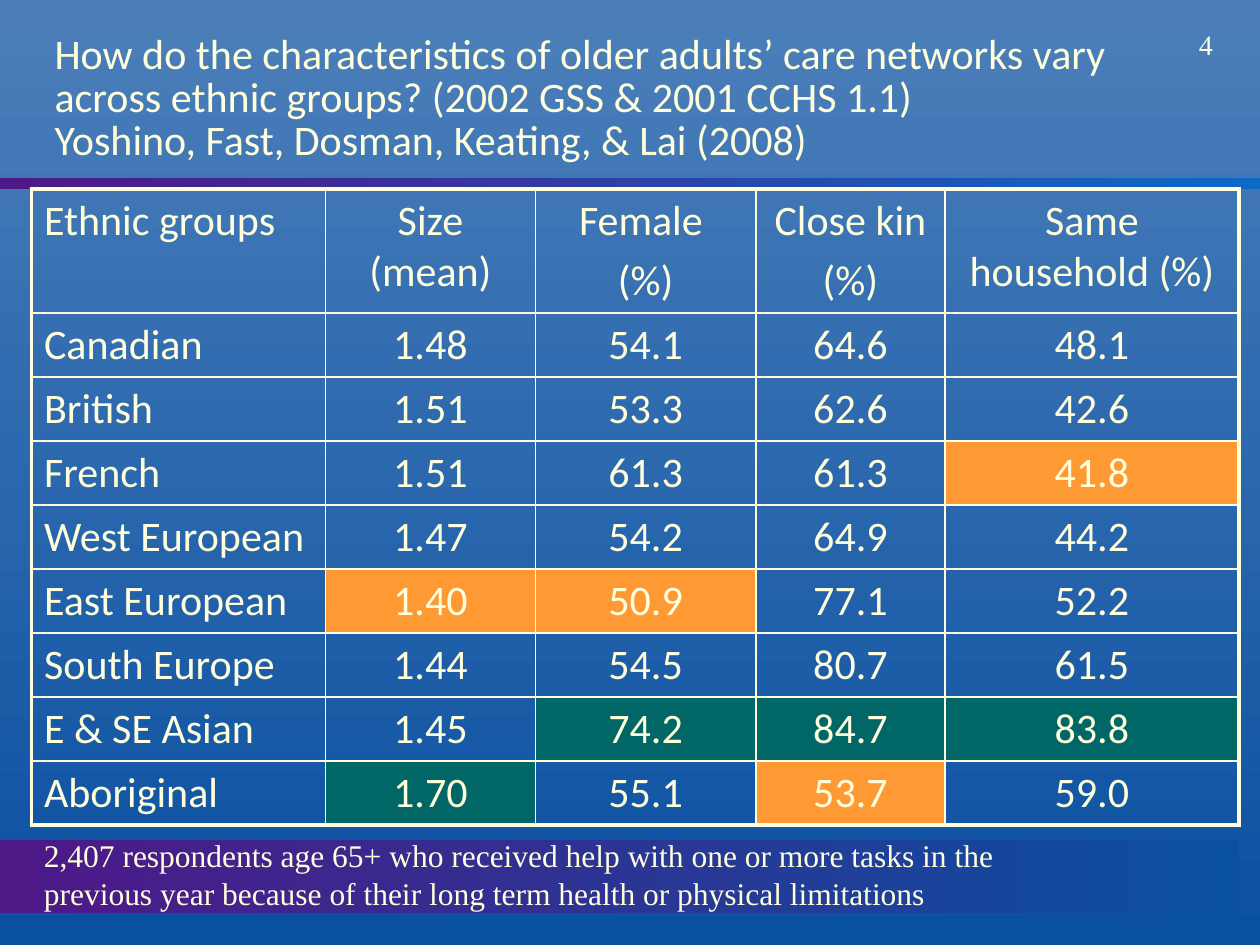
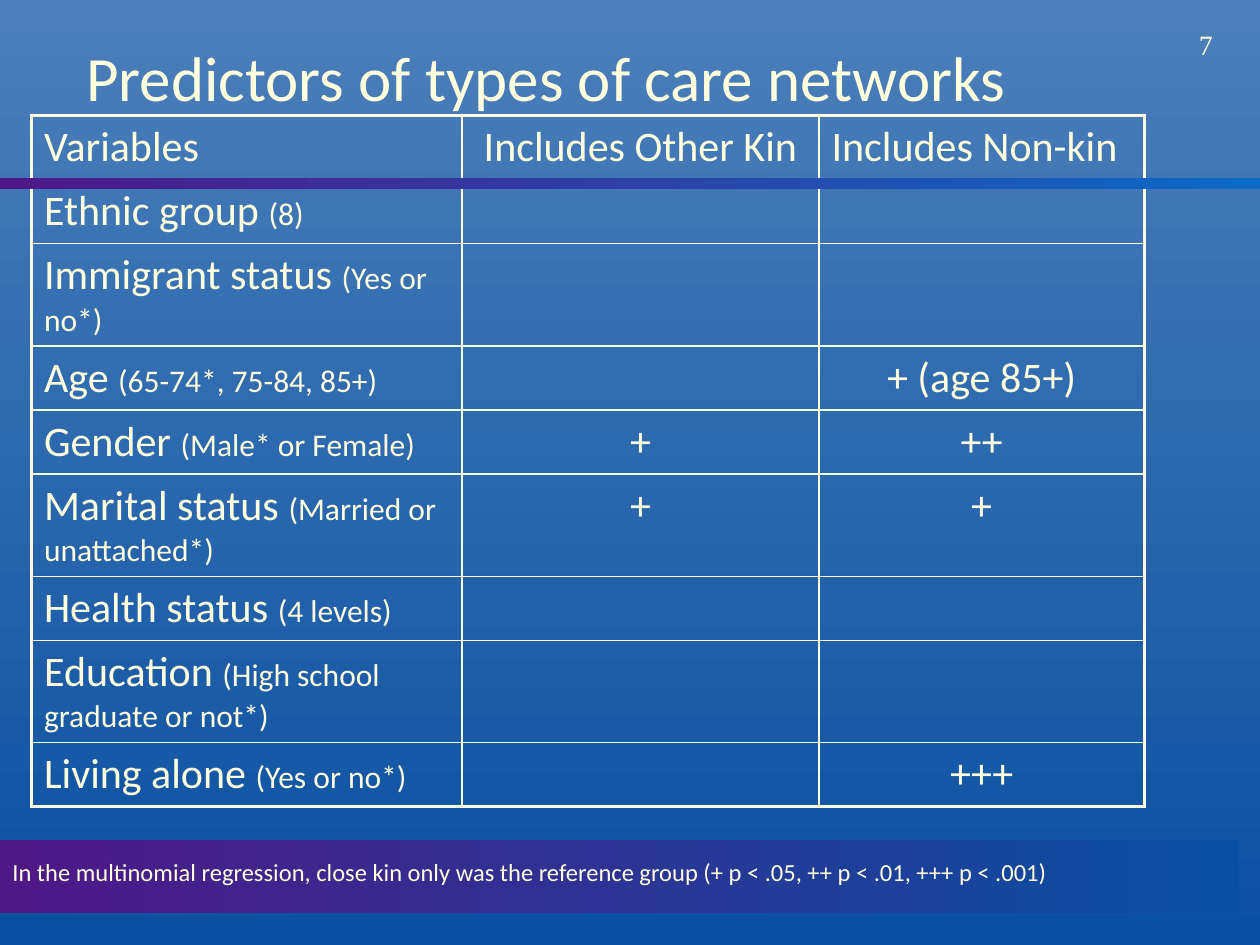
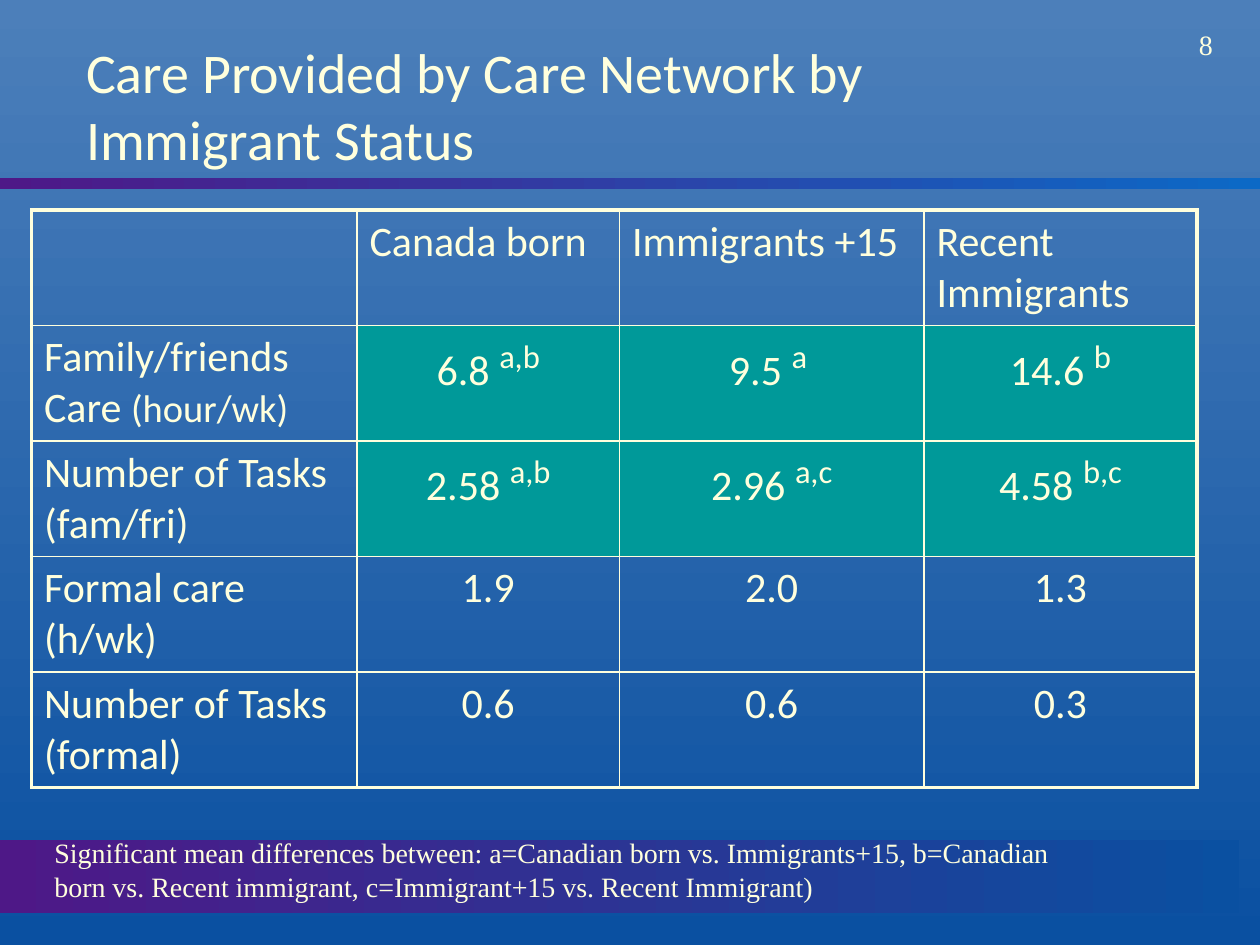
"""Build three table slides on older adults' care networks."""
import pptx
import pptx.dml.color
import pptx.enum.shapes
import pptx.enum.text
import pptx.oxml
import pptx.oxml.ns
import pptx.util

COLORS = {
    "cream": "FFFFDD", "sky": "4C7FBA", "navy": "0A50A1", "purple": "4E1887",
    "azure": "0C69C6", "orange": "FF9933", "green": "006666", "teal": "009999",
}
LEFT = pptx.enum.text.PP_ALIGN.LEFT
CENTER = pptx.enum.text.PP_ALIGN.CENTER


def rgb(name):
    return pptx.dml.color.RGBColor.from_string(COLORS[name])


def write(frame, text, size=24, font="Calibri", align=LEFT, gap=0, spacing=None,
          tail_size=18, raised=False):
    """Write one paragraph per line; the part after a bar is the tail."""
    for number, line in enumerate(text.split("\n")):
        para = frame.add_paragraph() if number else frame.paragraphs[0]
        para.alignment = align
        if number and gap:
            para.space_before = pptx.util.Pt(gap)
        if spacing:
            para.line_spacing = spacing
        for place, part in enumerate(line.split("|")):
            if not part:
                continue
            span = para.add_run()
            span.text = part
            span.font.name = font
            span.font.size = pptx.util.Pt(tail_size if place else size)
            span.font.color.rgb = rgb("cream")
            if place and raised:
                span._r.get_or_add_rPr().set("baseline", "30000")


SLIDES = [
    {
        "number": "4",
        "title": "How do the characteristics of older adults’ care networks vary across "
                 "ethnic groups? (2002 GSS & 2001 CCHS 1.1)\n"
                 "Yoshino, Fast, Dosman, Keating, & Lai (2008)",
        "title_box": (4, 3, 113, 13),
        "title_format": {"size": 24, "spacing": 0.85},
        "table_top": 18,
        "columns": [28, 20, 21, 18, 28],
        "rows": [11.8] + [6.1] * 8,
        "left_headers": {0},
        "fills": {(3, 4): "orange", (5, 1): "orange", (5, 2): "orange", (8, 3): "orange",
                  (7, 2): "green", (7, 3): "green", (7, 4): "green", (8, 1): "green"},
        "cells": [
            ["Ethnic groups", "Size (mean)", "Female \n(%)", "Close kin\n(%)",
             "Same household (%)"],
            ["Canadian", "1.48", "54.1", "64.6", "48.1"],
            ["British", "1.51", "53.3", "62.6", "42.6"],
            ["French", "1.51", "61.3", "61.3", "41.8"],
            ["West European", "1.47", "54.2", "64.9", "44.2"],
            ["East European", "1.40", "50.9", "77.1", "52.2"],
            ["South Europe", "1.44", "54.5", "80.7", "61.5"],
            ["E & SE Asian", "1.45", "74.2", "84.7", "83.8"],
            ["Aboriginal", "1.70", "55.1", "53.7", "59.0"],
        ],
        "note": "2,407 respondents age 65+ who received help with one or more tasks in the "
                "previous year because of their long term health or physical limitations",
        "note_box": (3, 79, 98, 8.5),
        "note_format": {"size": 18, "font": "Times New Roman"},
    },
    {
        "number": "7",
        "title": "Predictors of types of care networks",
        "title_box": (7, 2.5, 92, 9.5),
        "title_format": {"size": 36},
        "table_top": 11,
        "columns": [41, 34, 31],
        "rows": [6.1, 6.1, 9.7, 6.1, 6.1, 9.7, 6.1, 9.7, 6.1],
        "left_headers": {0, 2},
        "rule_in_front": True,
        "cells": [
            ["Variables", "Includes Other Kin", "Includes Non-kin"],
            ["Ethnic group |(8)", "", ""],
            ["Immigrant status |(Yes or no*)", "", ""],
            ["Age |(65-74*, 75-84, 85+)", "", "+ (age 85+)"],
            ["Gender |(Male* or Female)", "+", "++"],
            ["Marital status |(Married or unattached*)", "+", "+"],
            ["Health status |(4 levels)", "", ""],
            ["Education |(High school graduate or not*)", "", ""],
            ["Living alone |(Yes or no*)", "", "+++"],
        ],
        "note": "In the multinomial regression, close kin only was the reference group "
                "(+ p < .05, ++ p < .01, +++ p < .001)",
        "note_box": (0, 81, 105, 4),
        "note_format": {"size": 14},
    },
    {
        "number": "8",
        "title": "Care Provided by Care Network by Immigrant Status",
        "title_box": (7, 2.5, 94, 15),
        "title_format": {"size": 32},
        "table_top": 20,
        "columns": [31, 25, 29, 26],
        "rows": [11] * 5,
        "left_headers": {0, 1, 2, 3},
        "label_tail": 22,
        "fills": {(row, column): "teal" for row in (1, 2) for column in (1, 2, 3)},
        "cells": [
            ["", "Canada born", "Immigrants +15", "Recent Immigrants"],
            ["Family/friends Care |(hour/wk)", "6.8 |a,b", "9.5 |a ", "14.6 |b"],
            ["Number of Tasks (fam/fri)", "2.58 |a,b", "2.96 |a,c", "4.58 |b,c"],
            ["Formal care (h/wk)", "1.9", "2.0", "1.3"],
            ["Number of Tasks (formal)", "0.6", "0.6", "0.3"],
        ],
        "note": "Significant mean differences between: a=Canadian born vs. Immigrants+15, "
                "b=Canadian born vs. Recent immigrant, c=Immigrant+15 vs. Recent Immigrant)",
        "note_box": (4, 79, 101, 7.7),
        "note_format": {"size": 16, "font": "Times New Roman"},
    },
]
BANDS = [((0, 17, 120, 1), ("purple", "azure")), ((0, 80, 118, 7), ("purple", "navy"))]
NUMBER_BOX = (113, 2, 5.6, 4.4)
TABLE_LEFT = 3

deck = pptx.Presentation()
deck.slide_width = pptx.util.Inches(10)
deck.slide_height = pptx.util.Inches(7.5)
unit = deck.slide_width / 120

for content in SLIDES:
    page = deck.slides.add_slide(deck.slide_layouts[5])
    gradients = [(page.background.fill, ("sky", "navy"), 270)]
    bands = []
    for box, colors in BANDS:
        band = page.shapes.add_shape(pptx.enum.shapes.MSO_SHAPE.RECTANGLE,
                                     *[round(length * unit) for length in box])
        band.shadow.inherit = False
        band.line.fill.background()
        bands.append(band)
        gradients.append((band.fill, colors, 0))
    for fill, colors, angle in gradients:
        fill.gradient()
        fill.gradient_angle = angle
        for stop, color, position in zip(fill.gradient_stops, colors, (0, 1)):
            stop.color.rgb = rgb(color)
            stop.position = position

    title = page.shapes.title
    title.left, title.top, title.width, title.height = [
        round(length * unit) for length in content["title_box"]]
    title.text_frame.auto_size = pptx.enum.text.MSO_AUTO_SIZE.NONE
    title.text_frame.vertical_anchor = pptx.enum.text.MSO_ANCHOR.MIDDLE
    write(title.text_frame, content["title"], **content["title_format"])
    page.shapes.element.append(title.element)

    columns, rows = content["columns"], content["rows"]
    table_box = (TABLE_LEFT, content["table_top"], sum(columns), sum(rows))
    table = page.shapes.add_table(len(rows), len(columns),
                                  *[round(length * unit) for length in table_box]).table
    table.first_row = table.horz_banding = False
    for column, width in zip(table.columns, columns):
        column.width = round(width * unit)
    for row, height in zip(table.rows, rows):
        row.height = round(height * unit)

    for row, texts in enumerate(content["cells"]):
        for column, text in enumerate(texts):
            cell = table.cell(row, column)
            left = column == 0 or (row == 0 and column in content["left_headers"])
            write(cell.text_frame, text, align=LEFT if left else CENTER, gap=5,
                  tail_size=32 if column else content.get("label_tail", 18),
                  raised=column > 0)
            outer = {"L": column == 0, "R": column == len(columns) - 1,
                     "T": row == 0, "B": row == len(rows) - 1}
            for side, thick in outer.items():
                width = pptx.util.Pt(2.25 if thick else 1)
                cell._tc.get_or_add_tcPr().append(pptx.oxml.parse_xml(
                    f'<a:ln{side} {pptx.oxml.ns.nsdecls("a")} w="{width}"><a:solidFill>'
                    f'<a:srgbClr val="{COLORS["cream"]}"/></a:solidFill></a:ln{side}>'))
            color = content.get("fills", {}).get((row, column))
            if color:
                cell.fill.solid()
                cell.fill.fore_color.rgb = rgb(color)
            else:
                cell.fill.background()

    if content.get("rule_in_front"):
        page.shapes.element.append(bands[0].element)

    number = page.shapes.add_textbox(*[round(length * unit) for length in NUMBER_BOX])
    write(number.text_frame, content["number"], size=16, font="Times New Roman")
    note = page.shapes.add_textbox(*[round(length * unit) for length in content["note_box"]])
    note.text_frame.word_wrap = True
    write(note.text_frame, content["note"], **content["note_format"])

deck.save("out.pptx")
